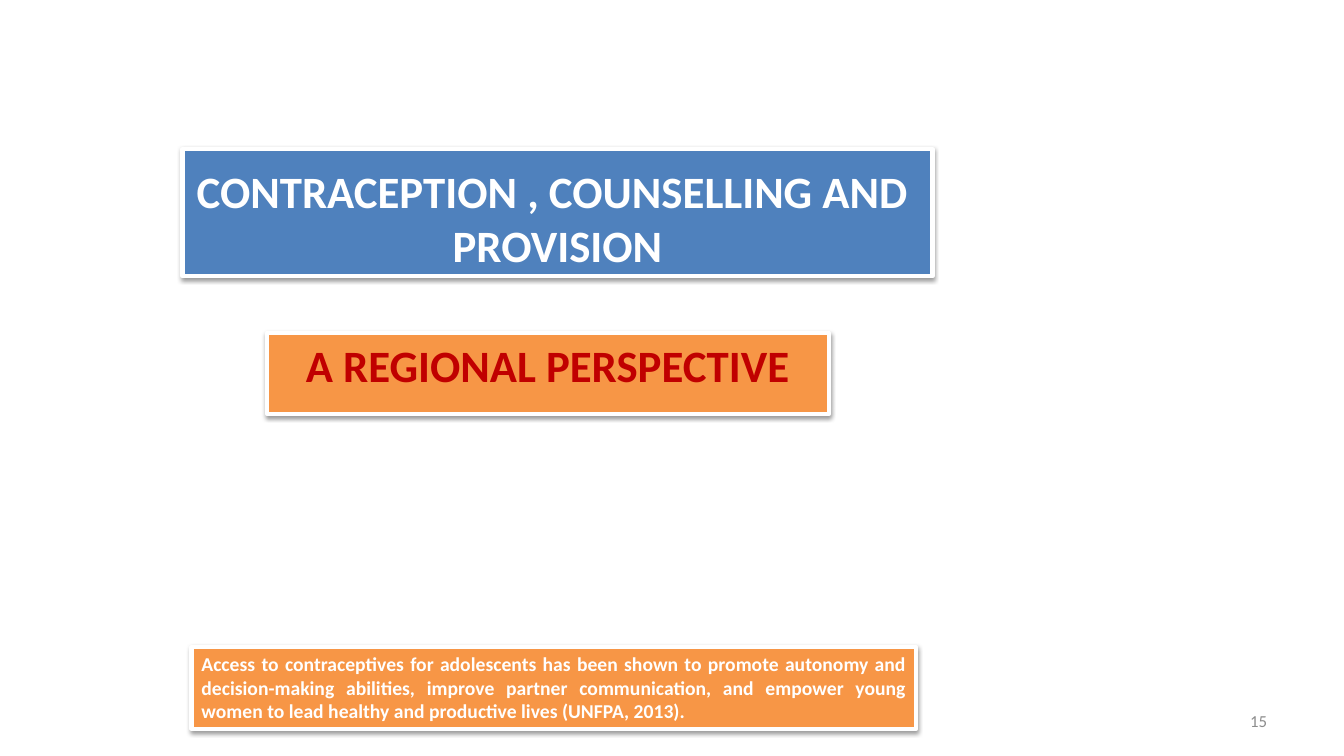
"""Build the section slide on contraception counselling."""
from dataclasses import dataclass
from typing import Optional

from lxml.etree import SubElement
from pptx import Presentation
from pptx.dml.color import RGBColor
from pptx.enum.shapes import MSO_SHAPE
from pptx.enum.text import MSO_ANCHOR, MSO_AUTO_SIZE, PP_ALIGN
from pptx.oxml.ns import qn
from pptx.shapes.autoshape import Shape
from pptx.slide import Slide
from pptx.util import Inches, Pt

WIDE, HIGH = Inches(13.33), Inches(7.5)
COLUMN, ROW = WIDE / 100, HIGH / 100
FONT = "Calibri"
WHITE = RGBColor(0xFF, 0xFF, 0xFF)
BLUE = RGBColor(0x4F, 0x81, 0xBD)
ORANGE = RGBColor(0xF7, 0x96, 0x46)
RED = RGBColor(0xC0, 0x00, 0x00)
GREY = RGBColor(0x8C, 0x8C, 0x8C)


@dataclass(frozen=True)
class Panel:
    """Text block placed in columns and rows of a 100 by 100 grid."""
    left: float
    top: float
    width: float
    height: float
    text: str
    size: int
    ink: RGBColor
    fill: Optional[RGBColor] = None
    align: PP_ALIGN = PP_ALIGN.CENTER
    anchor: MSO_ANCHOR = MSO_ANCHOR.TOP
    fit: MSO_AUTO_SIZE = MSO_AUTO_SIZE.NONE


PANELS = [
    Panel(19.88, 44, 41.78, 10.8, "A REGIONAL PERSPECTIVE", 32, RED, ORANGE),
    Panel(13.58, 19.73, 55.8, 16.8,
          "CONTRACEPTION , COUNSELLING AND \nPROVISION", 32, WHITE, BLUE,
          anchor=MSO_ANCHOR.BOTTOM),
    Panel(14.25, 85.6, 53.93, 10.8,
          "Access to contraceptives for adolescents has been shown to promote "
          "autonomy and decision-making abilities, improve partner "
          "communication, and empower young women to lead healthy and "
          "productive lives (UNFPA, 2013).", 14, WHITE, ORANGE,
          align=PP_ALIGN.JUSTIFY, fit=MSO_AUTO_SIZE.SHAPE_TO_FIT_TEXT),
    Panel(71.7, 92.67, 23.33, 5.33, "15", 12, GREY,
          align=PP_ALIGN.RIGHT, anchor=MSO_ANCHOR.MIDDLE),
]


def shade(shape: Shape) -> None:
    """Add a soft shadow below the shape."""
    shape.shadow.inherit = False
    effects = shape.fill._xPr.find(qn("a:effectLst"))
    outer = SubElement(effects, qn("a:outerShdw"), blurRad=str(Pt(3.1)),
                       dist=str(Pt(1.6)), dir="5400000", rotWithShape="0")
    tint = SubElement(outer, qn("a:srgbClr"), val="000000")
    SubElement(tint, qn("a:alpha"), val="38000")


def write(shape: Shape, panel: Panel) -> None:
    """Set and format the text of a panel."""
    frame = shape.text_frame
    frame.text = panel.text
    frame.word_wrap = True
    frame.auto_size = panel.fit
    frame.vertical_anchor = panel.anchor
    for line in frame.paragraphs:
        line.alignment = panel.align
        for run in line.runs:
            run.font.name = FONT
            run.font.size = Pt(panel.size)
            run.font.bold = panel.fill is not None
            run.font.color.rgb = panel.ink


def draw(slide: Slide, panel: Panel) -> None:
    """Draw a filled panel or a bare text box."""
    place = [int(panel.left * COLUMN), int(panel.top * ROW),
             int(panel.width * COLUMN), int(panel.height * ROW)]
    if panel.fill is None:
        shape = slide.shapes.add_textbox(*place)
    else:
        shape = slide.shapes.add_shape(MSO_SHAPE.RECTANGLE, *place)
        shape.fill.solid()
        shape.fill.fore_color.rgb = panel.fill
        shape.line.color.rgb = WHITE
        shape.line.width = Pt(3)
        shade(shape)
    write(shape, panel)


def main() -> None:
    """Create and save the slide."""
    deck = Presentation()
    deck.slide_width, deck.slide_height = WIDE, HIGH
    slide = deck.slides.add_slide(deck.slide_layouts[6])
    for panel in PANELS:
        draw(slide, panel)
    deck.save("out.pptx")


if __name__ == "__main__":
    main()
